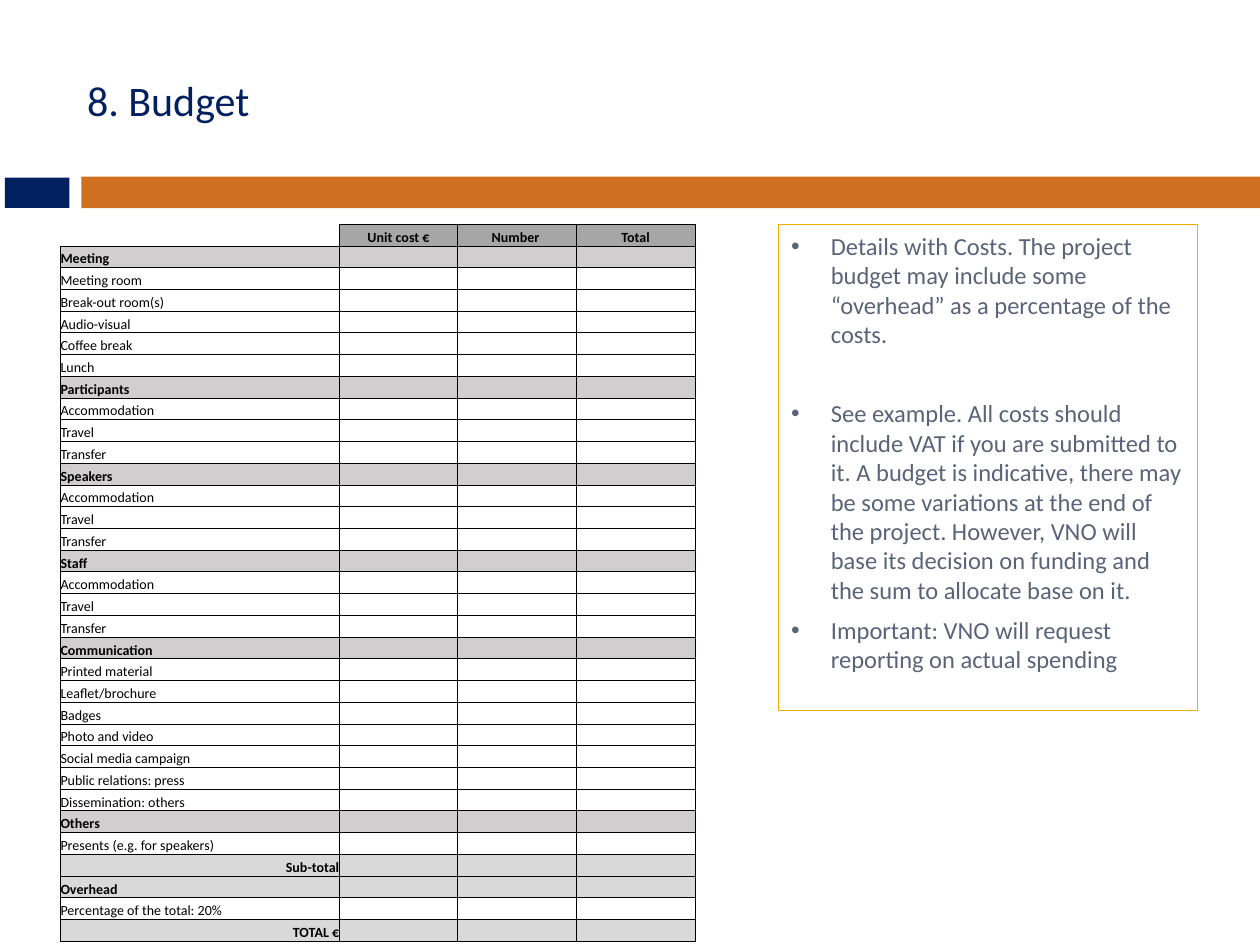
from pptx import Presentation
from pptx.dml.color import RGBColor
from pptx.enum.shapes import MSO_SHAPE
from pptx.enum.text import MSO_ANCHOR, PP_ALIGN
from pptx.util import Cm, Pt
from lxml.etree import SubElement
from pptx.oxml.ns import qn

FONT = "Calibri"
HUES = {"navy": "002060", "rust": "CF7021", "gold": "F0AD00", "slate": "5A6378",
        "black": "000000", "head": "A6A6A6", "group": "D0CECE", "sum": "D9D9D9"}
TITLE = "8. Budget"
HEADS = ["", "Unit cost €", "Number ", "Total"]
TRIP = ["Accommodation", "Travel", "Transfer"]
GROUPS = [
    ("Meeting", ["Meeting room", "Break-out room(s)", "Audio-visual", "Coffee break", "Lunch"]),
    ("Participants", TRIP),
    ("Speakers", TRIP),
    ("Staff", TRIP),
    ("Communication", ["Printed material", "Leaflet/brochure", "Badges", "Photo and video",
                       "Social media campaign", "Public relations: press",
                       "Dissemination: others"]),
    ("Others", ["Presents (e.g. for speakers)"]),
]
SUMS = [
    ("Sub-total", "sum", PP_ALIGN.RIGHT),
    ("Overhead", "sum", PP_ALIGN.LEFT),
    ("Percentage of the total: 20%", None, PP_ALIGN.LEFT),
    ("TOTAL €", "sum", PP_ALIGN.RIGHT),
]
NOTES = [
    ("Details with Costs. The project budget may include some “overhead” as a percentage "
     "of the costs.", 0),
    ("See example. All costs should include VAT if you are submitted to it. A budget is "
     "indicative, there may be some variations at the end of the project. However, VNO will "
     "base its decision on funding and the sum to allocate base on it.", 28.5),
    ("Important: VNO will request reporting on actual spending", 6),
]
BARS = [("rust", 1.64, 3.56, 23.76, 0.64), ("navy", 0.1, 3.58, 1.3, 0.61)]
COLS = [5.62, 2.39, 2.39, 2.39]
HIGH = 14.48


def hue(name):
    return RGBColor.from_string(HUES[name])


def add_run(para, text, size, color, bold=False):
    run = para.add_run()
    run.text = text
    run.font.name = FONT
    run.font.size = Pt(size)
    run.font.bold = bold
    run.font.color.rgb = hue(color)


def add_box(slide, left, top, width, height):
    box = slide.shapes.add_shape(MSO_SHAPE.RECTANGLE, Cm(left), Cm(top), Cm(width), Cm(height))
    box.shadow.inherit = False
    return box


def add_bars(slide):
    for color, *spot in BARS:
        bar = add_box(slide, *spot)
        bar.fill.solid()
        bar.fill.fore_color.rgb = hue(color)
        bar.line.fill.background()


def add_title(slide):
    title = slide.shapes.title
    title.left, title.top, title.width, title.height = Cm(1.5), Cm(0.64), Cm(22.66), Cm(2.74)
    title.text_frame.vertical_anchor = MSO_ANCHOR.MIDDLE
    para = title.text_frame.paragraphs[0]
    para.alignment = PP_ALIGN.LEFT
    add_run(para, TITLE, 24, "navy")


def add_notes(slide):
    box = add_box(slide, 15.7, 4.53, 8.44, 9.8)
    box.fill.background()
    box.line.color.rgb = hue("gold")
    box.line.width = Pt(0.75)
    frame = box.text_frame
    frame.word_wrap = True
    frame.vertical_anchor = MSO_ANCHOR.TOP
    for num, (text, gap) in enumerate(NOTES):
        para = frame.add_paragraph() if num else frame.paragraphs[0]
        para.alignment = PP_ALIGN.LEFT
        if gap:
            para.space_before = Pt(gap)
        props = para._p.get_or_add_pPr()
        props.set("marL", str(Cm(0.8)))
        props.set("indent", str(-Cm(0.8)))
        SubElement(props, qn("a:buFont"), typeface="Arial")
        SubElement(props, qn("a:buChar"), char="•")
        add_run(para, text, 14, "slate")


def set_edges(cell, sides):
    props = cell._tc.get_or_add_tcPr()
    for side in "LRTB":
        edge = SubElement(props, qn("a:ln" + side), w=str(Pt(0.5)))
        if side in sides:
            fill = SubElement(edge, qn("a:solidFill"))
            SubElement(fill, qn("a:srgbClr"), val=HUES["black"])
        else:
            SubElement(edge, qn("a:noFill"))


def set_cell(cell, text, fill, align, sides="LRTB"):
    cell.margin_left = cell.margin_right = cell.margin_top = cell.margin_bottom = 0
    cell.vertical_anchor = MSO_ANCHOR.BOTTOM
    set_edges(cell, sides)
    if fill:
        cell.fill.solid()
        cell.fill.fore_color.rgb = hue(fill)
    else:
        cell.fill.background()
    para = cell.text_frame.paragraphs[0]
    para.alignment = align
    if text:
        add_run(para, text, 8, "black", bool(fill))
    else:
        SubElement(para._p, qn("a:endParaRPr"), sz="800")


def add_costs(slide):
    lines = []
    for group, items in GROUPS:
        lines.append((group, "group", PP_ALIGN.LEFT))
        lines += [(item, None, PP_ALIGN.LEFT) for item in items]
    lines += SUMS
    count = len(lines) + 1
    table = slide.shapes.add_table(count, len(COLS), Cm(1.22), Cm(4.52),
                                   Cm(sum(COLS)), Cm(HIGH)).table
    table.first_row = table.horz_banding = False
    for col, width in zip(table.columns, COLS):
        col.width = Cm(width)
    for row in table.rows:
        row.height = Cm(HIGH / count)
    for num, text in enumerate(HEADS):
        set_cell(table.cell(0, num), text, "head" if text else None, PP_ALIGN.CENTER,
                 "LRTB" if text else "RB")
    for num, (label, fill, align) in enumerate(lines, 1):
        for col in range(len(COLS)):
            set_cell(table.cell(num, col), "" if col else label, fill, align)


def main():
    deck = Presentation()
    deck.slide_width, deck.slide_height = Cm(25.4), Cm(19.05)
    slide = deck.slides.add_slide(deck.slide_layouts[5])
    add_bars(slide)
    add_title(slide)
    add_notes(slide)
    add_costs(slide)
    deck.save("out.pptx")


if __name__ == "__main__":
    main()
